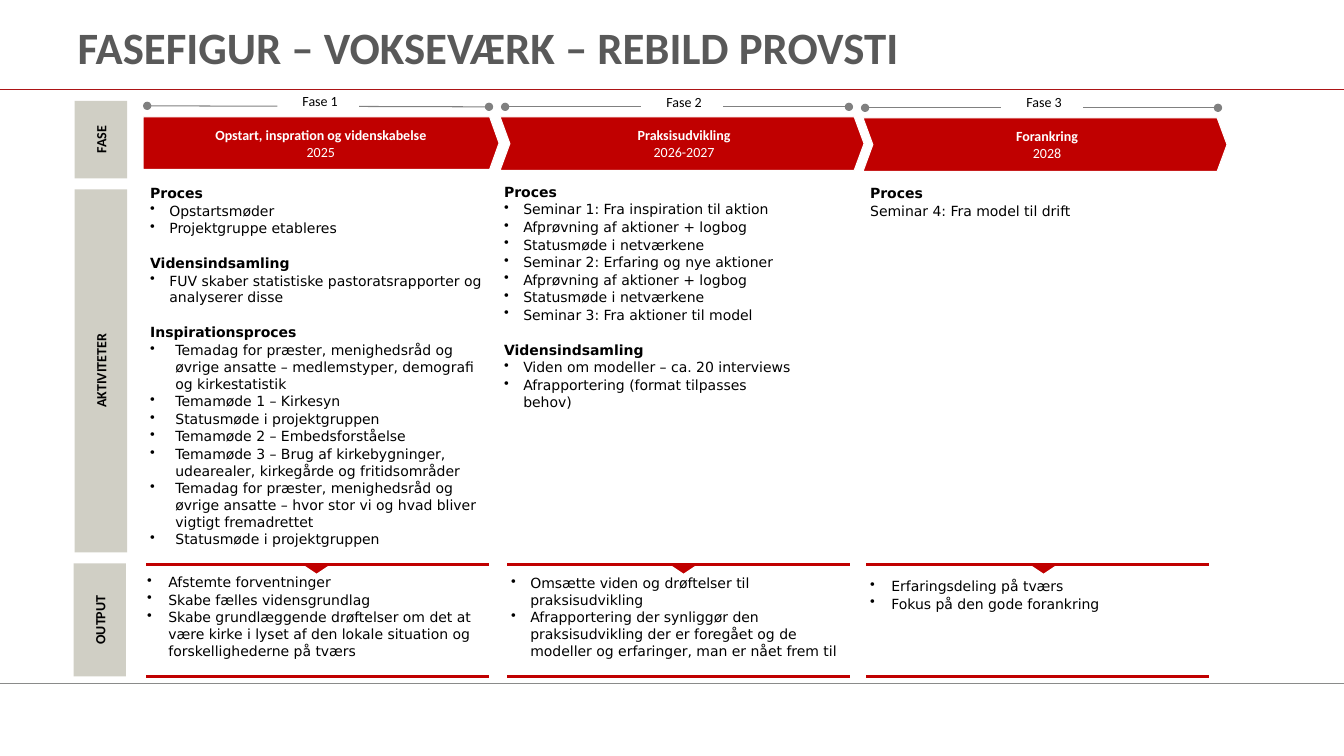
from lxml.etree import SubElement
from pptx import Presentation
from pptx.dml.color import RGBColor
from pptx.enum.shapes import MSO_CONNECTOR, MSO_SHAPE
from pptx.enum.text import MSO_ANCHOR, MSO_AUTO_SIZE, PP_ALIGN
from pptx.oxml.ns import qn
from pptx.util import Pt

PX = 9144  # 100 px to the inch
RED = RGBColor(0xC0, 0x00, 0x00)
DEEP = RGBColor(0xAC, 0x14, 0x16)
GREY = RGBColor(0x80, 0x80, 0x80)
ASH = RGBColor(0x8A, 0x8B, 0x8A)
DARK = RGBColor(0x59, 0x59, 0x59)
SAND = RGBColor(0xD0, 0xCF, 0xC5)
WHITE = RGBColor(0xFF, 0xFF, 0xFF)
BLACK = RGBColor(0, 0, 0)
HEAD, BODY = "Calibri", "DejaVu Sans"
WIDTH, HEIGHT = 1333, 750
RULE = 340  # width of the rules round an output box

SIDE = [("FASE", (74, 100, 52, 77), 4),
        ("AKTIVITETER", (74, 188, 52, 360), 4),
        ("OUTPUT", (73, 559, 52, 112), 0)]

# Each activity group: heading, bullet indent (0 for plain text), items
PHASES = [
    dict(name="Fase 1", title="Opstart, inspration og videnskabelse", year="2025",
         span=(146, 105, 485, 106), label=(275, 92), form=MSO_SHAPE.PENTAGON,
         arrow=(142, 116, 353, 52), adj=0.179, acts=(145, 183, 336, 391),
         groups=[
             ("Proces", 19, ["Opstartsmøder", "Projektgruppe etableres"]),
             ("Vidensindsamling", 19, [
                 "FUV skaber statistiske pastoratsrapporter og analyserer disse"]),
             ("Inspirationsproces", 25, [
                 "Temadag for præster, menighedsråd og øvrige ansatte – "
                 "medlemstyper, demografi og kirkestatistik",
                 "Temamøde 1 – Kirkesyn",
                 "Statusmøde i projektgruppen",
                 "Temamøde 2 – Embedsforståelse",
                 "Temamøde 3 – Brug af kirkebygninger, udearealer, "
                 "kirkegårde og fritidsområder",
                 "Temadag for præster, menighedsråd og øvrige ansatte – "
                 "hvor stor vi og hvad bliver vigtigt fremadrettet",
                 "Statusmøde i projektgruppen"])],
         rule=145, tip=296, out=(142, 569, 339, 87), indent=21,
         goals=["Afstemte forventninger", "Skabe fælles vidensgrundlag",
                "Skabe grundlæggende drøftelser om det at være kirke i lyset "
                "af den lokale situation og forskellighederne på tværs"]),
    dict(name="Fase 2", title="Praksisudvikling", year="2026-2027",
         span=(501, 106, 842, 106), label=(636, 93), form=MSO_SHAPE.CHEVRON,
         arrow=(496, 116, 361, 53), adj=0.184, acts=(496, 182, 290, 270),
         groups=[
             ("Proces", 19, [
                 "Seminar 1: Fra inspiration til aktion",
                 "Afprøvning af aktioner + logbog",
                 "Statusmøde i netværkene",
                 "Seminar 2: Erfaring og nye aktioner",
                 "Afprøvning af aktioner + logbog",
                 "Statusmøde i netværkene",
                 "Seminar 3: Fra aktioner til model"]),
             ("Vidensindsamling", 19, [
                 "Viden om modeller – ca. 20 interviews",
                 "Afrapportering (format tilpasses behov)"])],
         rule=503, tip=660, out=(503, 570, 339, 86), indent=19,
         goals=["Omsætte viden og drøftelser til praksisudvikling",
                "Afrapportering der synliggør den praksisudvikling der er "
                "foregået og de modeller og erfaringer, man er nået frem til"]),
    dict(name="Fase 3", title="Forankring", year="2028",
         span=(858, 107, 1208, 107), label=(993, 93), form=MSO_SHAPE.CHEVRON,
         arrow=(856, 117, 361, 53), adj=0.184, acts=(859, 183, 361, 35),
         groups=[("Proces", 0, ["Seminar 4: Fra model til drift"])],
         rule=859, tip=1017, out=(859, 573, 339, 35), indent=21,
         goals=["Erfaringsdeling på tværs", "Fokus på den gode forankring"]),
]


def px(*nums):
    return [n * PX for n in nums]


def write(frame, text, size=10, font=HEAD, color=BLACK, bold=False,
          align=PP_ALIGN.LEFT, indent=0, before=0.0):
    """Add one paragraph, bulleted when it has an indent."""
    first = not frame.text
    para = frame.paragraphs[0] if first else frame.add_paragraph()
    para.alignment = align
    para.space_before = Pt(0 if first else before)
    if indent:
        props = para._p.get_or_add_pPr()
        props.set("marL", str(indent * PX))
        props.set("indent", str(-indent * PX))
        SubElement(props, qn("a:buChar")).set("char", "•")
    run = para.add_run()
    run.text = text
    run.font.size, run.font.name, run.font.bold = Pt(size), font, bold
    run.font.color.rgb = color


def pad(frame, left=4, top=0, right=0, bottom=0, anchor=MSO_ANCHOR.TOP):
    frame.margin_left, frame.margin_top, frame.margin_right, frame.margin_bottom = px(
        left, top, right, bottom)
    frame.word_wrap = True
    frame.vertical_anchor = anchor


def shape(slide, form, box, fill, edge=None, width=0.75):
    item = slide.shapes.add_shape(form, *px(*box))
    item.shadow.inherit = False
    item.fill.solid()
    item.fill.fore_color.rgb = fill
    if edge is None:
        item.line.fill.background()
    else:
        item.line.color.rgb = edge
        item.line.width = Pt(width)
    return item


def line(slide, ends, color, width, dots=False):
    item = slide.shapes.add_connector(MSO_CONNECTOR.STRAIGHT, *px(*ends))
    item.line.color.rgb = color
    item.line.width = Pt(width)
    if dots:
        for tag in ("a:headEnd", "a:tailEnd"):
            SubElement(item.line._get_or_add_ln(), qn(tag)).set("type", "oval")
    SubElement(item._element.spPr, qn("a:effectLst"))


def textbox(slide, box):
    frame = slide.shapes.add_textbox(*px(*box)).text_frame
    pad(frame)
    return frame


def header(slide, box):
    title = slide.shapes.title
    title.left, title.top, title.width, title.height = px(*box)
    frame = title.text_frame
    pad(frame, 10, 5, 10, 5, MSO_ANCHOR.MIDDLE)
    frame.auto_size = MSO_AUTO_SIZE.NONE
    write(frame, "FASEFIGUR – VOKSEVÆRK – REBILD PROVSTI",
          size=32, color=DARK, bold=True)


def side(slide, text, box, gap):
    frame = shape(slide, MSO_SHAPE.RECTANGLE, box, SAND).text_frame
    pad(frame, gap, gap, gap, gap, MSO_ANCHOR.MIDDLE)
    frame._txBody.bodyPr.set("vert", "vert270")
    write(frame, text, bold=True, align=PP_ALIGN.CENTER)


def banner(slide, phase):
    """Draw the time span with its label, and the arrow below."""
    line(slide, phase["span"], GREY, 0.75, dots=True)
    label = shape(slide, MSO_SHAPE.RECTANGLE, (*phase["label"], 81, 17), WHITE)
    pad(label.text_frame)
    write(label.text_frame, phase["name"], align=PP_ALIGN.CENTER)
    arrow = shape(slide, phase["form"], phase["arrow"], RED, WHITE)
    arrow.adjustments[0] = phase["adj"]
    pad(arrow.text_frame, 4, 10, 0, 10, MSO_ANCHOR.MIDDLE)
    for key in ("title", "year"):
        write(arrow.text_frame, phase[key], color=WHITE, bold=key == "title",
              align=PP_ALIGN.CENTER)


def actions(slide, box, groups):
    frame = textbox(slide, box)
    for head, indent, items in groups:
        write(frame, head, font=BODY, bold=True, before=13)
        for item in items:
            write(frame, item, font=BODY, indent=indent, before=0.5)


def output(slide, phase):
    """Draw the goals between two rules, with a tip under the upper one."""
    frame = textbox(slide, phase["out"])
    for goal in phase["goals"]:
        write(frame, goal, font=BODY, indent=phase["indent"], before=0.5)
    tip = shape(slide, MSO_SHAPE.ISOSCELES_TRIANGLE, (phase["tip"], 559, 36, 12),
                RED, WHITE, 2.25)
    tip.rotation = 180
    left = phase["rule"]
    for y in (560, 671):
        line(slide, (left, y, left + RULE, y), RED, 2.25)


def main():
    deck = Presentation()
    deck.slide_width, deck.slide_height = px(WIDTH, HEIGHT)
    slide = deck.slides.add_slide(deck.slide_layouts[5])
    for y, color in ((678, ASH), (89, DEEP)):
        line(slide, (0, y, WIDTH, y), color, 1)
    header(slide, (67, -28, 1200, 148))
    for text, box, gap in SIDE:
        side(slide, text, box, gap)
    for phase in PHASES:
        banner(slide, phase)
        actions(slide, phase["acts"], phase["groups"])
        output(slide, phase)
    deck.save("out.pptx")


if __name__ == "__main__":
    main()
